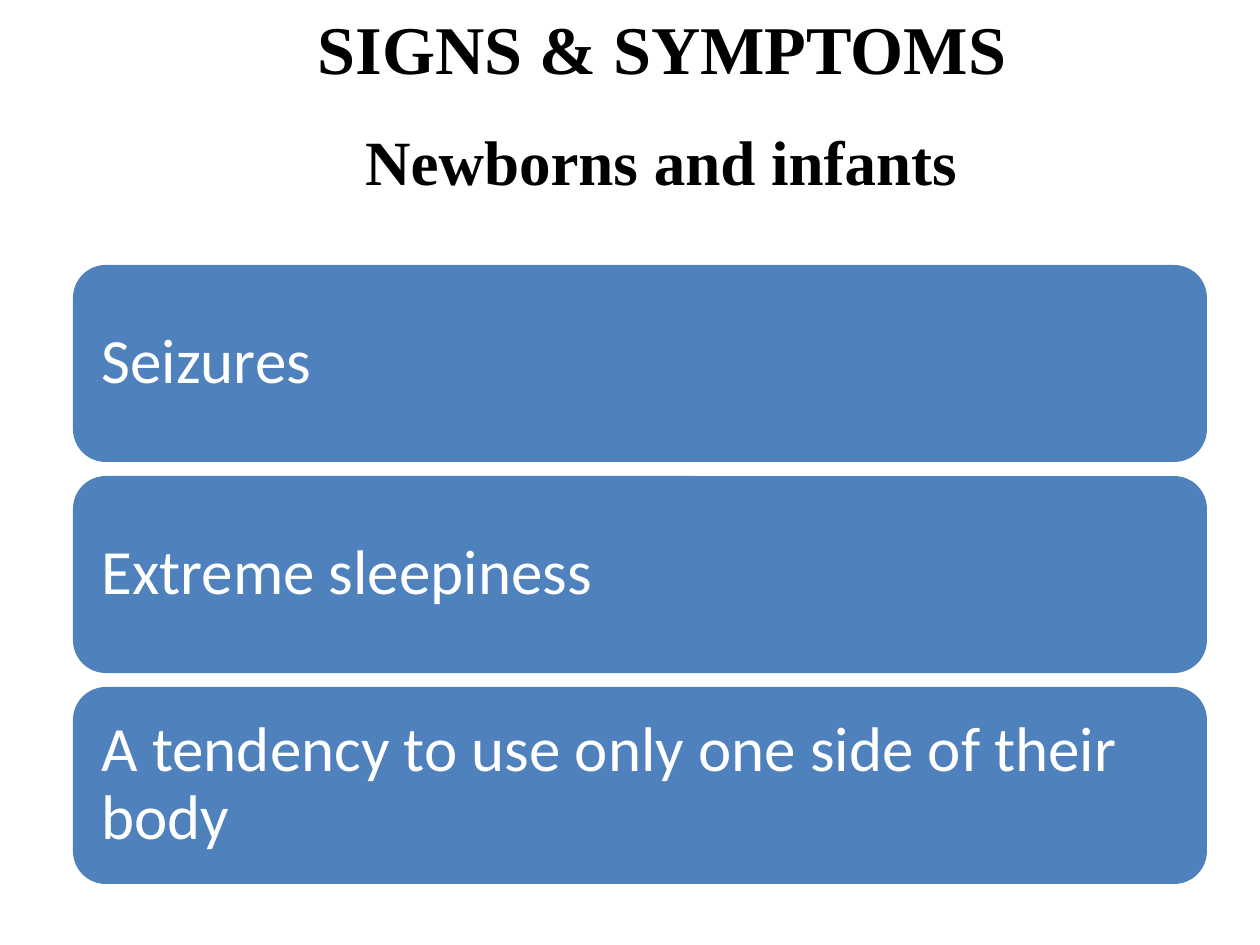
from pptx import Presentation
from pptx import util as u
from pptx.dml.color import RGBColor
from pptx.enum import shapes, text

BLACK = RGBColor(0x00, 0x00, 0x00)
WHITE = RGBColor(0xFF, 0xFF, 0xFF)
BLUE = RGBColor(0x4F, 0x81, 0xBD)

HEADINGS = [
    ("Newborns and infants", 36, (94, 116, 1134, 158), text.MSO_ANCHOR.TOP),
    ("SIGNS & SYMPTOMS", 39, (116, 0, 1092, 95), text.MSO_ANCHOR.MIDDLE),
]
SYMPTOMS = [
    "Seizures",
    "Extreme sleepiness",
    "A tendency to use only one side of their body",
]
LEFT, TOP, WIDTH, HEIGHT, PITCH = 73, 265, 1134, 197, 211
INSET = 19


def px(n):
    return u.Emu(round(n * 914400 / 126))


def write(sp, words, size, font, color, align, anchor):
    tf = sp.text_frame
    tf.word_wrap = True
    tf.vertical_anchor = anchor
    p = tf.paragraphs[0]
    p.text = words
    p.alignment = align
    p.font.size = u.Pt(size)
    p.font.name = font
    p.font.color.rgb = color
    return tf, p


prs = Presentation()
prs.slide_width, prs.slide_height = px(1260), px(945)
slide = prs.slides.add_slide(prs.slide_layouts[6])

for i, symptom in enumerate(SYMPTOMS):
    sp = slide.shapes.add_shape(
        shapes.MSO_SHAPE.ROUNDED_RECTANGLE,
        px(LEFT), px(TOP + i * PITCH), px(WIDTH), px(HEIGHT))
    sp.shadow.inherit = False
    sp.fill.solid()
    sp.fill.fore_color.rgb = BLUE
    sp.line.fill.background()
    tf, p = write(sp, symptom, 36, "Calibri", WHITE,
                  text.PP_ALIGN.LEFT, text.MSO_ANCHOR.MIDDLE)
    tf.margin_left = tf.margin_right = px(INSET)
    tf.margin_top = tf.margin_bottom = px(INSET)
    p.line_spacing = 0.9

for words, size, box, anchor in HEADINGS:
    sp = slide.shapes.add_textbox(*map(px, box))
    tf, p = write(sp, words, size, "Times New Roman", BLACK,
                  text.PP_ALIGN.CENTER, anchor)
    p.font.bold = True

prs.save("out.pptx")
